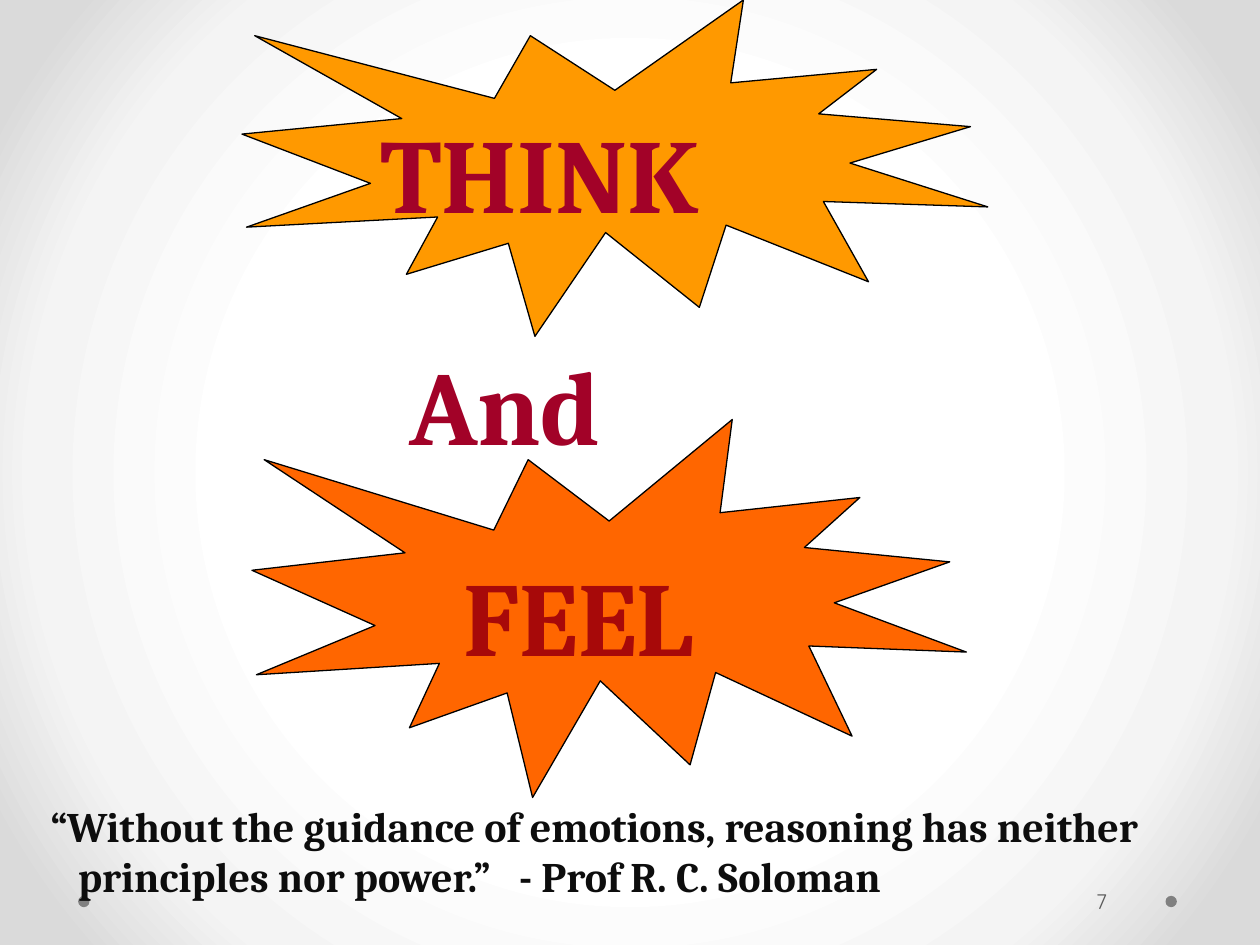
from lxml.etree import SubElement
from pptx import Presentation
from pptx.dml.color import RGBColor
from pptx.enum.shapes import MSO_SHAPE
from pptx.enum.text import MSO_ANCHOR, MSO_AUTO_SIZE, PP_ALIGN
from pptx.oxml.ns import qn
from pptx.util import Inches, Pt

COLORS = {
    "dot": "808080", "page": "595959", "line": "000000",
    "think": "FF9900", "feel": "FF6600",
    "wine": "A20228", "red": "A70909", "ink": "0D0D0D",
}
STOPS = [(50, "FFFFFF"), (76, "F4F4F4"), (92, "DADADA")]
BIG = {"name": "Cambria", "size": Pt(60), "bold": True}
QUOTE = {"name": "Cambria", "size": Pt(24), "bold": True}
SMALL = {"name": "Quicksand", "size": Pt(12), "bold": False}


def rgb(key):
    """Return the named colour."""
    return RGBColor.from_string(COLORS[key])


def set_all(item, form):
    """Set each attribute of an item from a dict."""
    for name, value in form.items():
        setattr(item, name, value)


def add_back(slide):
    """Fill the background with a radial gradient."""
    fill = slide.background.fill
    fill.gradient()
    grad = slide.background._cSld.find(".//" + qn("a:gradFill"))
    for child in list(grad):
        grad.remove(child)
    stops = SubElement(grad, qn("a:gsLst"))
    for pos, color in STOPS:
        stop = SubElement(stops, qn("a:gs"), pos=str(pos * 1000))
        SubElement(stop, qn("a:srgbClr"), val=color)
    ring = SubElement(grad, qn("a:path"), path="circle")
    SubElement(ring, qn("a:fillToRect"), dict.fromkeys("ltrb", "50000"))


def add_form(slide, kind, box, color, edge=False):
    """Add a filled preset shape, with or without an outline."""
    form = slide.shapes.add_shape(kind, *map(Inches, box))
    form.shadow.inherit = False
    form.fill.solid()
    form.fill.fore_color.rgb = rgb(color)
    if edge:
        form.line.color.rgb = rgb("line")
        form.line.width = Pt(0.75)
    else:
        form.line.fill.background()


def put_text(shape, lines, font, color, **frame):
    """Write lines of text in one font and colour."""
    body = shape.text_frame
    base = {"word_wrap": True, "auto_size": MSO_AUTO_SIZE.NONE}
    set_all(body, base | frame)
    body.text = "\n".join(lines)
    for par in body.paragraphs:
        par.alignment = PP_ALIGN.LEFT
        set_all(par.font, font)
        par.font.color.rgb = rgb(color)
    return body.paragraphs


def add_text(slide, box, lines, font, color, **frame):
    """Add a text box and return its paragraphs."""
    shape = slide.shapes.add_textbox(*map(Inches, box))
    return put_text(shape, lines, font, color, **frame)


def add_title(slide, box, text):
    """Move and format the title placeholder."""
    title = slide.shapes.title
    sides = ("left", "top", "width", "height")
    set_all(title, dict(zip(sides, map(Inches, box))))
    put_text(title, [text], BIG, "wine", margin_left=Inches(2.67),
             vertical_anchor=MSO_ANCHOR.BOTTOM)


def add_quote(slide):
    """Add the quotation with a hanging indent and a tabbed author."""
    lines = ["“Without the guidance of emotions, reasoning has neither",
             "principles nor power.”\t- Prof R. C. Soloman"]
    pars = add_text(slide, (0, 5.99, 10.33, 1.51), lines, QUOTE, "ink",
                    margin_left=Inches(0.4), margin_top=Inches(0.36))
    for par, first in zip(pars, (-0.22, 0)):
        props = par._p.get_or_add_pPr()
        props.set("marL", str(Inches(0.22)))
        props.set("indent", str(Inches(first)))
    tabs = props.makeelement(qn("a:tabLst"))
    SubElement(tabs, qn("a:tab"), pos=str(Inches(4.23)), algn="l")
    props.insert(0, tabs)


def main():
    """Build and save the slide."""
    deck = Presentation()
    set_all(deck, {"slide_width": Inches(10), "slide_height": Inches(7.5)})
    slide = deck.slides.add_slide(deck.slide_layouts[5])
    add_back(slide)
    for left in (9.25, 0.62):
        add_form(slide, MSO_SHAPE.OVAL, (left, 7.11, 0.09, 0.09), "dot")
    add_text(slide, (8.67, 6.95, 0.83, 0.4), ["7"], SMALL, "page",
             margin_left=Inches(0.03), vertical_anchor=MSO_ANCHOR.MIDDLE)
    add_title(slide, (0.58, 2.67, 8.5, 1.08), "And")
    for box, color in (((1.92, 0, 5.92, 2.67), "think"),
                       ((2, 3.33, 5.67, 3), "feel")):
        add_form(slide, MSO_SHAPE.EXPLOSION1, box, color, True)
    add_text(slide, (2.92, 0.83, 3.83, 1.08), ["THINK"], BIG, "wine",
             vertical_anchor=MSO_ANCHOR.BOTTOM)
    add_text(slide, (3.58, 4.33, 2.38, 1.1), ["FEEL"], BIG, "red")
    add_quote(slide)
    deck.save("out.pptx")


if __name__ == "__main__":
    main()
